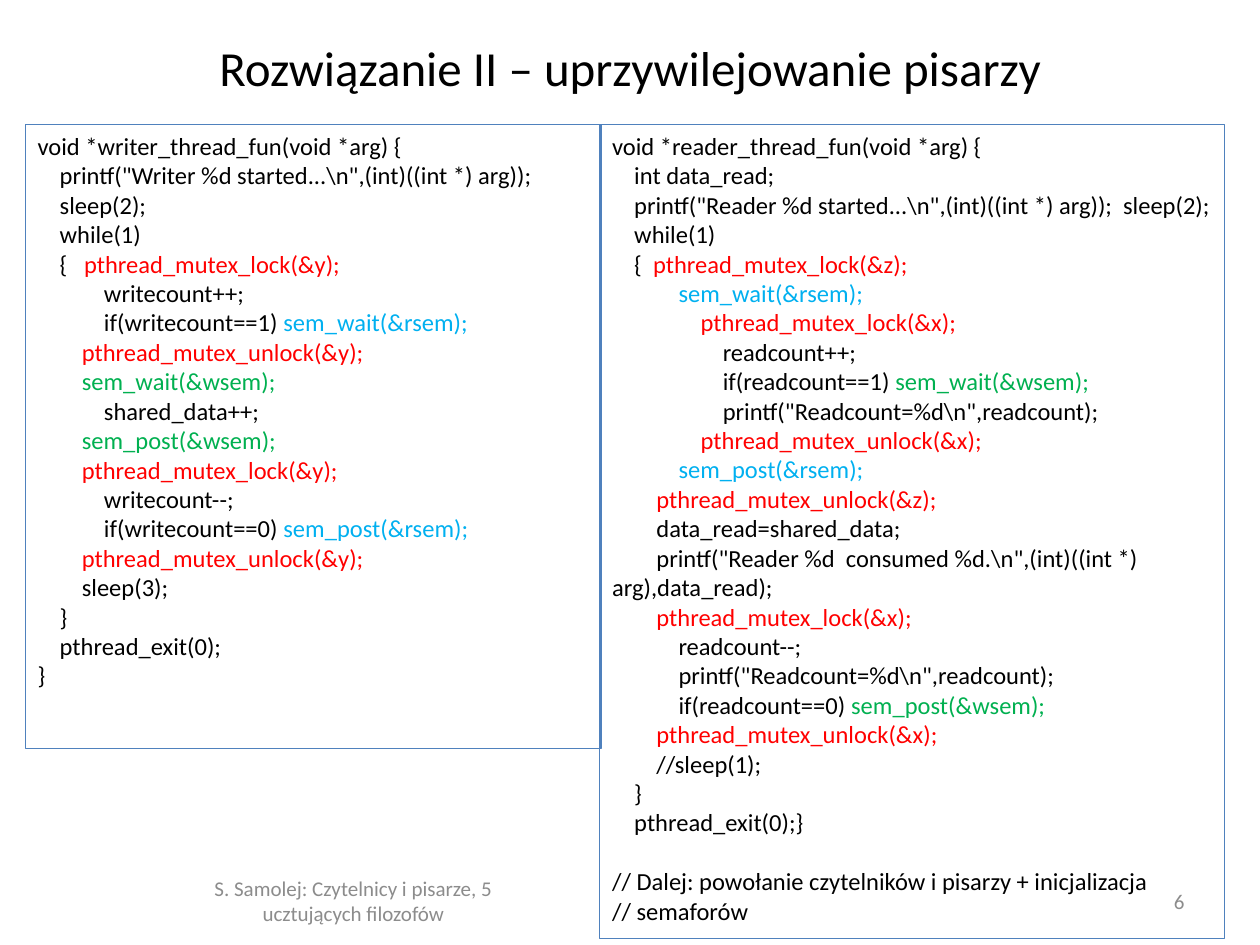
from dataclasses import dataclass

from pptx import Presentation
from pptx.dml.color import RGBColor
from pptx.enum.text import MSO_ANCHOR, MSO_AUTO_SIZE, PP_ALIGN
from pptx.util import Inches, Pt


@dataclass(frozen=True)
class Theme:
    font: str = "Calibri"
    title_size: int = 28
    code_size: int = 14
    footer_size: int = 12
    indent_step: float = 12.65  # points for each level of code
    line_height: float = 16.8  # points taken by one line of code
    text: str = "000000"
    footer: str = "8C8C8C"
    border: str = "4F81BD"
    mutex: str = "FF0000"
    reader_semaphore: str = "00B0F0"
    writer_semaphore: str = "00B050"


@dataclass(frozen=True)
class Area:
    left: float
    top: float
    width: float
    height: float


@dataclass(frozen=True)
class CodePanel:
    area: Area
    lines: list[tuple[int, str]]  # indent level and code
    comments: tuple[str, ...] = ()  # set apart below the code


@dataclass(frozen=True)
class FooterItem:
    area: Area
    text: str
    alignment: PP_ALIGN


THEME = Theme()

WRITER = CodePanel(Area(0.2, 0.99, 4.57, 4.95), [
    (0, "void *writer_thread_fun(void *arg) {"),
    (1, r'printf("Writer %d started...\n",(int)((int *) arg));'),
    (1, "sleep(2);"),
    (1, "while(1)"),
    (1, "{   pthread_mutex_lock(&y);"),
    (3, "writecount++;"),
    (3, "if(writecount==1) sem_wait(&rsem);"),
    (2, "pthread_mutex_unlock(&y);"),
    (2, "sem_wait(&wsem);"),
    (3, "shared_data++;"),
    (2, "sem_post(&wsem);"),
    (2, "pthread_mutex_lock(&y);"),
    (3, "writecount--;"),
    (3, "if(writecount==0) sem_post(&rsem);"),
    (2, "pthread_mutex_unlock(&y);"),
    (2, "sleep(3);"),
    (1, "}"),
    (1, "pthread_exit(0);"),
    (0, "}"),
])

READER = CodePanel(Area(4.76, 0.99, 4.96, 6.46), [
    (0, "void *reader_thread_fun(void *arg) {"),
    (1, "int data_read;"),
    (1, r'printf("Reader %d started...\n",(int)((int *) arg));  sleep(2);'),
    (1, "while(1)"),
    (1, "{  pthread_mutex_lock(&z);"),
    (3, "sem_wait(&rsem);"),
    (4, "pthread_mutex_lock(&x);"),
    (5, "readcount++;"),
    (5, "if(readcount==1) sem_wait(&wsem);"),
    (5, r'printf("Readcount=%d\n",readcount);'),
    (4, "pthread_mutex_unlock(&x);"),
    (3, "sem_post(&rsem);"),
    (2, "pthread_mutex_unlock(&z);"),
    (2, "data_read=shared_data;"),
    (2, r'printf("Reader %d  consumed %d.\n",(int)((int *) arg),data_read);'),
    (2, "pthread_mutex_lock(&x);"),
    (3, "readcount--;"),
    (3, r'printf("Readcount=%d\n",readcount);'),
    (3, "if(readcount==0) sem_post(&wsem);"),
    (2, "pthread_mutex_unlock(&x);"),
    (2, "//sleep(1);"),
    (1, "}"),
    (1, "pthread_exit(0);}"),
], ("// Dalej: powołanie czytelników i pisarzy + inicjalizacja", "// semaforów"))

FOOTER = [
    FooterItem(Area(1.22, 6.95, 3.17, 0.4),
               "S. Samolej: Czytelnicy i pisarze, 5 ucztujących filozofów", PP_ALIGN.CENTER),
    FooterItem(Area(7.17, 6.95, 2.33, 0.4), "6", PP_ALIGN.RIGHT),
]


def place(shape, area: Area) -> None:
    shape.left, shape.top = Inches(area.left), Inches(area.top)
    shape.width, shape.height = Inches(area.width), Inches(area.height)


def style(font, size: int, color: str) -> None:
    font.name = THEME.font
    font.size = Pt(size)
    font.color.rgb = RGBColor.from_string(color)


def add_box(page, area: Area):
    box = page.shapes.add_textbox(0, 0, 0, 0)
    place(box, area)
    box.text_frame.word_wrap = True
    return box


def split_call(code: str) -> tuple[str, str]:
    """Separate plain code from the synchronising call that ends the line."""
    for prefix in ("pthread_mutex_", "sem_"):
        start = code.find(prefix)
        if start >= 0:
            return code[:start], code[start:]
    return code, ""


def call_color(call: str) -> str:
    if call.startswith("pthread_mutex_"):
        return THEME.mutex
    return THEME.reader_semaphore if "&rsem" in call else THEME.writer_semaphore


def add_code_panel(page, panel: CodePanel) -> None:
    box = add_box(page, panel.area)
    box.line.color.rgb = RGBColor.from_string(THEME.border)
    box.line.width = Pt(0.75)
    frame = box.text_frame
    lines = panel.lines + [(0, comment) for comment in panel.comments]
    for number, (level, code) in enumerate(lines):
        para = frame.add_paragraph() if number else frame.paragraphs[0]
        style(para.font, THEME.code_size, THEME.text)
        if number == len(panel.lines):
            para.space_before = Pt(THEME.line_height)
        # First-line indent, so a wrapped line returns to the margin
        properties = para._p.get_or_add_pPr()
        properties.set("marL", "0")
        properties.set("indent", str(int(Pt(level * THEME.indent_step))))
        plain, call = split_call(code)
        if plain:
            para.add_run().text = plain
        if call:
            span = para.add_run()
            span.text = call
            span.font.color.rgb = RGBColor.from_string(call_color(call))


def add_footer_item(page, item: FooterItem) -> None:
    frame = add_box(page, item.area).text_frame
    frame.vertical_anchor = MSO_ANCHOR.MIDDLE
    para = frame.paragraphs[0]
    para.text = item.text
    para.alignment = item.alignment
    style(para.font, THEME.footer_size, THEME.footer)


def add_title(page, text: str) -> None:
    title = page.shapes.title
    place(title, Area(0.5, 0.3, 9, 0.46))
    frame = title.text_frame
    frame.text = text
    frame.auto_size = MSO_AUTO_SIZE.NONE
    frame.vertical_anchor = MSO_ANCHOR.MIDDLE
    para = frame.paragraphs[0]
    para.alignment = PP_ALIGN.CENTER
    style(para.font, THEME.title_size, THEME.text)


def main() -> None:
    deck = Presentation()
    deck.slide_width, deck.slide_height = Inches(10), Inches(7.5)
    page = deck.slides.add_slide(deck.slide_layouts[5])

    # Heading and footer
    add_title(page, "Rozwiązanie II – uprzywilejowanie pisarzy")
    for item in FOOTER:
        add_footer_item(page, item)

    # Writer and reader code side by side
    for panel in (WRITER, READER):
        add_code_panel(page, panel)

    deck.save("out.pptx")


if __name__ == "__main__":
    main()
